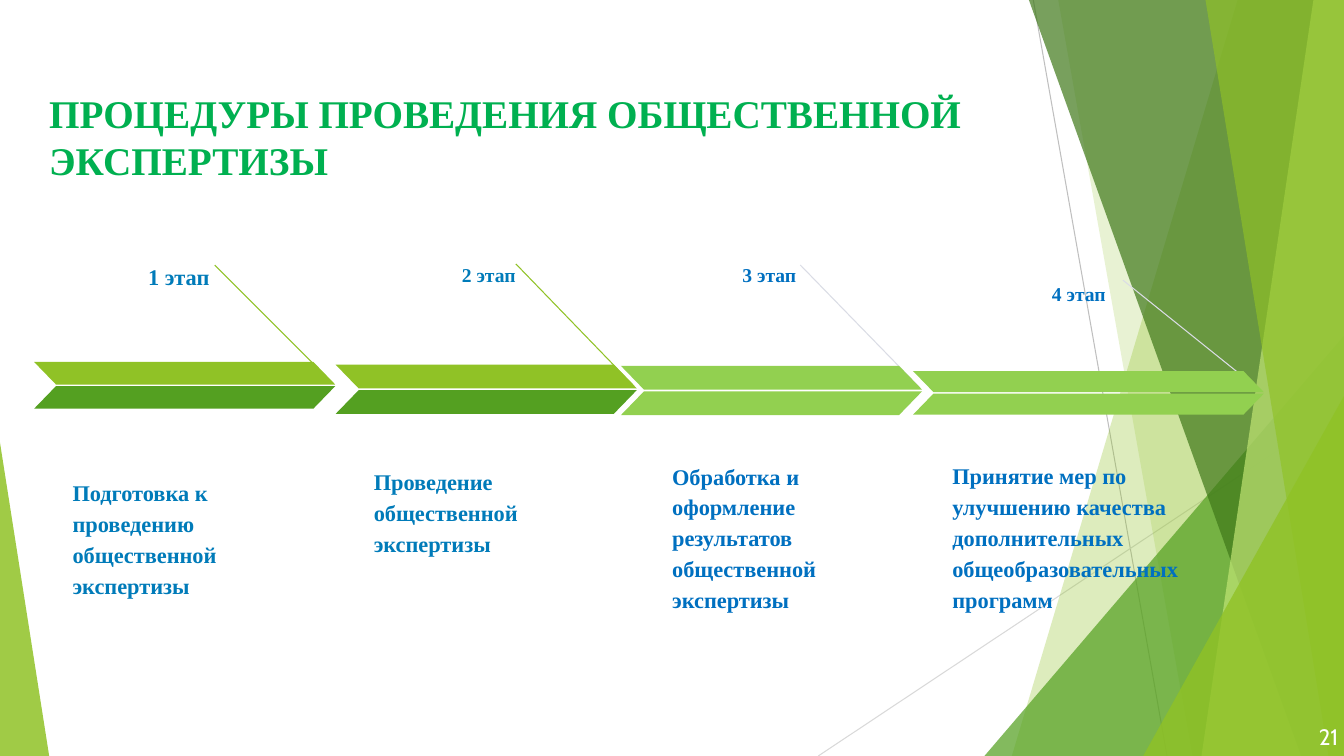
"""Build the slide on the four stages of a public review."""
from dataclasses import dataclass

from lxml.etree import SubElement
from pptx import Presentation
from pptx.dml.color import RGBColor
from pptx.enum.shapes import MSO_CONNECTOR, MSO_SHAPE
from pptx.enum.text import MSO_ANCHOR, MSO_AUTO_SIZE, PP_ALIGN
from pptx.oxml.ns import qn
from pptx.shapes.autoshape import Shape
from pptx.slide import Slide
from pptx.util import Cm, Pt

WIDTH, HEIGHT = 33.87, 19.05
GAP = 0.04
INSET = 0.33

Box = tuple[float, float, float, float]
Point = tuple[float, float]


@dataclass(frozen=True)
class Theme:
    """Colours, fonts and type sizes."""
    lime: str = "90C226"
    green: str = "54A021"
    forest: str = "3F7819"
    pale: str = "C0E474"
    bright: str = "92D050"
    head: str = "00B050"
    teal: str = "007BB9"
    blue: str = "0070C0"
    mist: str = "DADCE5"
    grey: str = "BFBFBF"
    silver: str = "D9D9D9"
    white: str = "FFFFFF"
    serif: str = "Times New Roman"
    sans: str = "Cabin"
    title: int = 28
    body: int = 16
    small: int = 14


@dataclass(frozen=True)
class Facet:
    """A panel from a slanted left edge to the right edge of the slide."""
    top: float
    foot: float
    colour: str
    alpha: int


@dataclass(frozen=True)
class Wedge:
    """A right triangle standing on the foot of the slide."""
    left: float
    top: float
    width: float
    peak: float
    colour: str
    alpha: int


@dataclass(frozen=True)
class Stage:
    """A two-part arrow with its label, pointer and text."""
    name: str
    text: str
    tag: Box
    note: Box
    start: Point
    end: Point
    bar: Box
    size: int
    ink: str
    wire: str
    upper: str
    lower: str


T = Theme()

DECOR: list[Facet | Wedge] = [
    Facet(31.19, 25.5, T.lime, 30),
    Facet(26.67, 30.05, T.lime, 20),
    Wedge(24.81, 8.46, 9.06, 1, T.green, 72),
    Facet(25.93, 32.79, T.forest, 70),
    Facet(33.1, 30.28, T.pale, 70),
    Facet(30.38, 33.48, T.lime, 65),
    Wedge(28.81, 9.98, 5.06, 1, T.lime, 80),
    Wedge(0, 11.15, 1.24, 0, T.lime, 85),
]

STAGES = [
    Stage("1 этап", "Подготовка к проведению общественной экспертизы",
          (3.02, 6.2, 2.59, 0.97), (1.5, 10.59, 6.22, 4.83),
          (5.41, 6.68), (8.36, 9.63), (0.86, 9.12, 7.59, 0.57),
          T.body, T.teal, T.lime, T.lime, T.green),
    Stage("2 этап", "Проведение общественной экспертизы",
          (10.74, 6.2, 2.59, 0.99), (9.09, 10.8, 6.22, 3.56),
          (13, 6.65), (15.98, 9.73), (8.46, 9.19, 7.59, 0.6),
          T.small, T.teal, T.lime, T.lime, T.green),
    Stage("3 этап", "Обработка и оформление результатов общественной экспертизы",
          (17.81, 6.2, 2.59, 0.99), (16.61, 11.84, 6.68, 3.94),
          (20.17, 6.68), (23.16, 9.75), (15.65, 9.22, 7.59, 0.6),
          T.small, T.blue, T.mist, T.bright, T.bright),
    Stage("4 этап", "Принятие мер по улучшению качества дополнительных "
          "общеобразовательных программ",
          (25.2, 6.68, 3, 0.91), (23.67, 10.08, 7.34, 5.69),
          (28.3, 7.06), (31.75, 9.83), (23.01, 9.35, 8.84, 0.53),
          T.small, T.blue, T.mist, T.bright, T.bright),
]


def paint(shape: Shape, colour: str, alpha: int = 100) -> None:
    """Fill a shape flat, with no outline or shadow."""
    shape.shadow.inherit = False
    shape.line.fill.background()
    shape.fill.solid()
    shape.fill.fore_color.rgb = RGBColor.from_string(colour)
    if alpha < 100:
        tone = shape._element.spPr.find(".//" + qn("a:srgbClr"))
        SubElement(tone, qn("a:alpha")).set("val", str(alpha * 1000))


def rule(slide: Slide, start: Point, end: Point, colour: str) -> None:
    """Draw a thin straight line."""
    line = slide.shapes.add_connector(
        MSO_CONNECTOR.STRAIGHT, *(Cm(n) for n in start + end))
    line.line.width = Pt(0.75)
    line.line.color.rgb = RGBColor.from_string(colour)
    SubElement(line._element.spPr, qn("a:effectLst"))


def write(shape: Shape, text: str, size: int, colour: str, inset: float = 0,
          face: str = T.serif, bold: bool = True, lead: float = 1,
          after: float = 0, align: PP_ALIGN = PP_ALIGN.LEFT,
          anchor: MSO_ANCHOR = MSO_ANCHOR.TOP) -> None:
    """Set one paragraph of text in a shape."""
    frame = shape.text_frame
    frame.text = text
    frame.word_wrap = True
    frame.auto_size = MSO_AUTO_SIZE.NONE
    frame.vertical_anchor = anchor
    frame.margin_left = frame.margin_right = Cm(inset)
    frame.margin_top = frame.margin_bottom = Cm(inset)
    line = frame.paragraphs[0]
    line.alignment, line.line_spacing = align, lead
    line.space_before, line.space_after = Pt(0), Pt(after)
    font = line.font
    font.name, font.size, font.bold = face, Pt(size), bold
    font.color.rgb = RGBColor.from_string(colour)


def label(slide: Slide, box: Box) -> Shape:
    """Add an empty text box."""
    return slide.shapes.add_textbox(*(Cm(n) for n in box))


def adorn(slide: Slide, part: Facet | Wedge) -> None:
    """Draw one part of the backdrop."""
    if isinstance(part, Facet):
        pen = slide.shapes.build_freeform(Cm(part.top), Cm(0))
        ends = [(WIDTH, 0), (WIDTH, HEIGHT), (part.foot, HEIGHT)]
        pen.add_line_segments([(Cm(x), Cm(y)) for x, y in ends])
        shape = pen.convert_to_shape()
    else:
        shape = slide.shapes.add_shape(
            MSO_SHAPE.ISOSCELES_TRIANGLE, Cm(part.left), Cm(part.top),
            Cm(part.width), Cm(HEIGHT - part.top))
        shape.adjustments[0] = part.peak
    paint(shape, part.colour, part.alpha)


def show(slide: Slide, stage: Stage) -> None:
    """Draw one stage."""
    write(label(slide, stage.tag), stage.name, stage.size, stage.ink, INSET,
          lead=1.15, after=21.4, align=PP_ALIGN.RIGHT)
    write(label(slide, stage.note), stage.text, T.body, stage.ink, INSET,
          lead=1.15, anchor=MSO_ANCHOR.BOTTOM)
    rule(slide, stage.start, stage.end, stage.wire)
    left, top, width, height = stage.bar
    for row, colour in enumerate((stage.upper, stage.lower)):
        half = slide.shapes.add_shape(
            MSO_SHAPE.PARALLELOGRAM, Cm(left), Cm(top + row * (height + GAP)),
            Cm(width), Cm(height))
        half.adjustments[0] = 0.97
        paint(half, colour)
        if row == 0:
            half._element.spPr.xfrm.set("flipH", "1")


def main() -> None:
    """Build and save the deck."""
    deck = Presentation()
    deck.slide_width, deck.slide_height = Cm(WIDTH), Cm(HEIGHT)
    slide = deck.slides.add_slide(deck.slide_layouts[5])
    rule(slide, (26.04, 0), (29.41, HEIGHT), T.grey)
    rule(slide, (WIDTH, 10.24), (20.62, HEIGHT), T.silver)
    for part in DECOR:
        adorn(slide, part)
    title = slide.shapes.title
    title.left, title.top = Cm(1.24), Cm(2.24)
    title.width, title.height = Cm(29.97), Cm(2.49)
    write(title, "ПРОЦЕДУРЫ ПРОВЕДЕНИЯ ОБЩЕСТВЕННОЙ ЭКСПЕРТИЗЫ",
          T.title, T.head)
    write(label(slide, (32.03, 17.17, 1.7, 1.73)), "21", T.body, T.white,
          face=T.sans, bold=False, align=PP_ALIGN.RIGHT,
          anchor=MSO_ANCHOR.BOTTOM)
    for stage in STAGES:
        show(slide, stage)
    deck.save("out.pptx")


if __name__ == "__main__":
    main()
